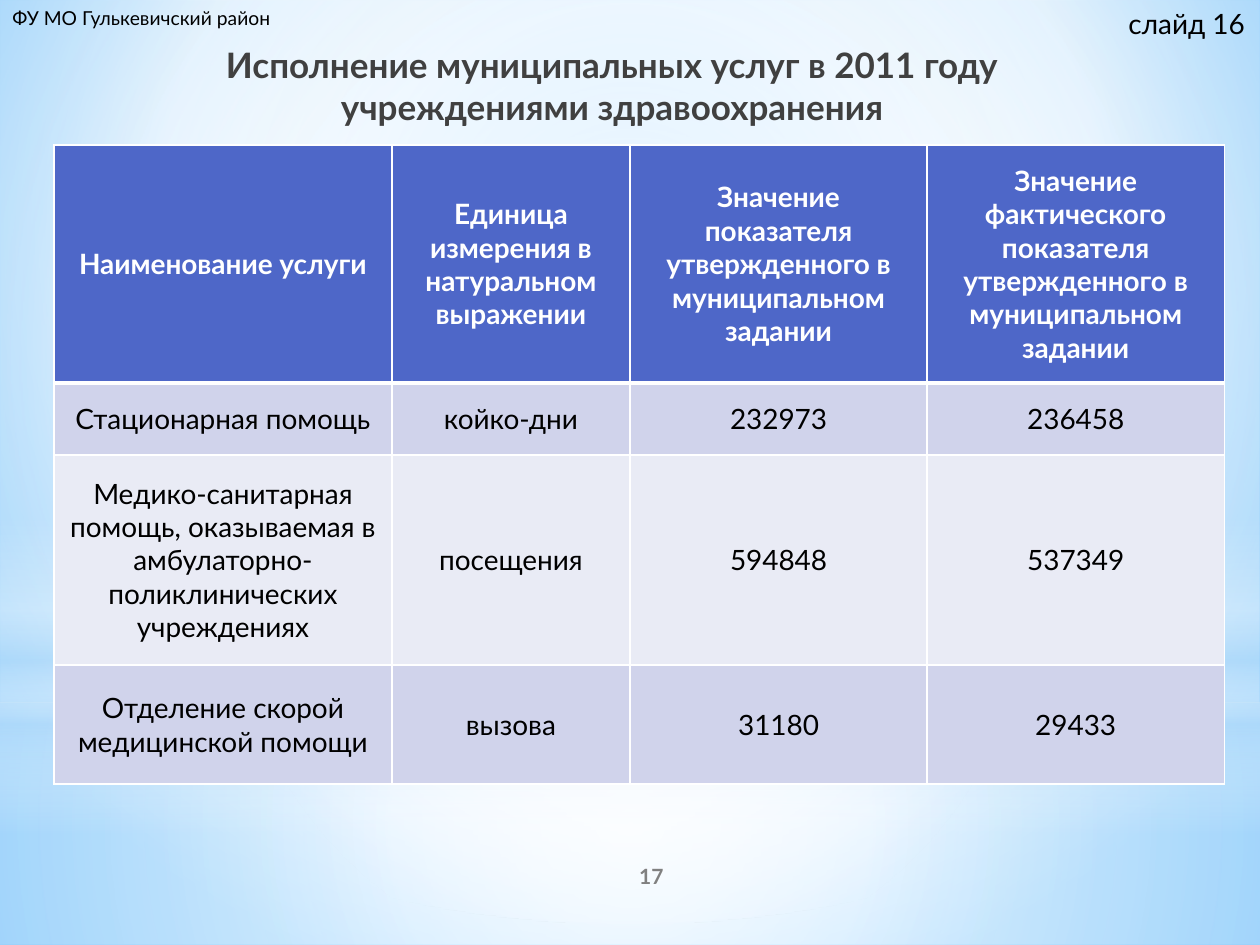
from dataclasses import dataclass

from lxml.etree import SubElement
from pptx import Presentation
from pptx.dml.color import RGBColor
from pptx.enum.shapes import MSO_SHAPE
from pptx.enum.text import MSO_ANCHOR, MSO_AUTO_SIZE, PP_ALIGN
from pptx.oxml import parse_xml
from pptx.oxml.ns import nsdecls, qn
from pptx.util import Cm, Pt


@dataclass(frozen=True)
class Theme:
    font: str = "Lato"
    white: str = "FFFFFF"
    black: str = "000000"
    haze: str = "B4DCFA"
    title: str = "404040"
    number: str = "808080"
    header: str = "4E67C8"
    bands: tuple = ("D0D3EB", "E9EBF5")
    title_size: int = 20
    body_size: int = 16
    number_size: int = 12
    note_size: int = 11


T = Theme()
CENTRE = (50, 50, 50, 50)

BACKDROP = [
    (MSO_SHAPE.RECTANGLE, (0, 14.17, 25.4, 4.88),
     [(0, T.white, 91), (37, T.white, 76), (100, T.haze, 79)], CENTRE),
    (MSO_SHAPE.RECTANGLE, (0, 0, 25.4, 14.17),
     [(0, T.white, 89), (48, T.white, 62), (100, T.haze, 79)], CENTRE),
    (MSO_SHAPE.RECTANGLE, (0, 10.46, 25.4, 6.35),
     [(0, T.white, 0), (29, T.white, 30), (45, T.haze, 40),
      (55, T.white, 26), (65, T.haze, 60), (100, T.white, 0)], None),
    (MSO_SHAPE.OVAL, (0, 4.45, 25.4, 14.17),
     [(0, T.white, 100), (56, T.white, 0)], CENTRE),
]

COLUMNS = [6.81, 4.8, 5.99, 5.99]
ROW_HEIGHTS = [4.8, 1.45, 4.24, 2.39]
ROWS = [
    ("Наименование услуги",
     "Единица измерения в натуральном выражении",
     "Значение показателя утвержденного в муниципальном задании",
     "Значение фактического показателя утвержденного в муниципальном задании"),
    ("Стационарная помощь", "койко-дни", "232973", "236458"),
    ("Медико-санитарная помощь, оказываемая в "
     "амбулаторно-поликлинических учреждениях",
     "посещения", "594848", "537349"),
    ("Отделение скорой медицинской помощи", "вызова", "31180", "29433"),
]


def set_attrs(obj, values):
    for name, value in values.items():
        setattr(obj, name, value)


def place(sp, box):
    set_attrs(sp, dict(zip(("left", "top", "width", "height"), map(Cm, box))))


def gradient(stops, focus):
    grad = parse_xml(f'<a:gradFill {nsdecls("a")} rotWithShape="1"/>')
    gs_list = SubElement(grad, qn("a:gsLst"))
    for pos, color, opacity in stops:
        gs = SubElement(gs_list, qn("a:gs"), pos=str(pos * 1000))
        clr = SubElement(gs, qn("a:srgbClr"), val=color)
        if opacity < 100:
            SubElement(clr, qn("a:alpha"), val=str(opacity * 1000))
    if focus:
        path = SubElement(grad, qn("a:path"), path="circle")
        sides = {k: str(v * 1000) for k, v in zip("ltrb", focus)}
        SubElement(path, qn("a:fillToRect"), sides)
    else:
        SubElement(grad, qn("a:lin"), ang="5400000", scaled="0")
    return grad


def apply_gradient(fill, parent, stops, focus):
    fill.solid()
    parent.replace(parent.find(qn("a:solidFill")), gradient(stops, focus))


def add_backdrop(s):
    fill = s.background.fill
    fill.solid()
    props = next(s.element.iter(qn("p:bgPr")))
    apply_gradient(fill, props, [(0, "9ED5FF", 100), (60, T.white, 100),
                                 (100, "5BB9FF", 100)], (20, 10, 20, 60))
    for kind, box, stops, focus in BACKDROP:
        sp = s.shapes.add_shape(kind, *map(Cm, box))
        sp.shadow.inherit = False
        sp.line.fill.background()
        apply_gradient(sp.fill, sp.element.spPr, stops, focus)


def write(tf, text, size, color, bold=False, align=PP_ALIGN.LEFT):
    p = tf.paragraphs[0]
    p.alignment = align
    r = p.add_run()
    r.text = text
    set_attrs(r.font, {"name": T.font, "size": Pt(size), "bold": bold})
    r.font.color.rgb = RGBColor.from_string(color)


def add_title(s, text):
    sp = s.shapes.title
    place(sp, (3.3, 0.74, 18.08, 2.21))
    s.shapes.element.append(sp.element)
    set_attrs(sp.text_frame, {"word_wrap": True, "vertical_anchor": MSO_ANCHOR.TOP,
                              "auto_size": MSO_AUTO_SIZE.NONE})
    write(sp.text_frame, text, T.title_size, T.title, True, PP_ALIGN.CENTER)


def add_label(s, box, text, size):
    tf = s.shapes.add_textbox(*map(Cm, box)).text_frame
    set_attrs(tf, {"word_wrap": False, "auto_size": MSO_AUTO_SIZE.SHAPE_TO_FIT_TEXT})
    write(tf, text, size, T.black)


def add_number(s, text):
    tf = s.shapes.add_textbox(*map(Cm, (10.59, 17.15, 5.08, 1.02))).text_frame
    set_attrs(tf, {"word_wrap": True, "vertical_anchor": MSO_ANCHOR.MIDDLE})
    write(tf, text, T.number_size, T.number, True, PP_ALIGN.CENTER)


def add_borders(props, widths):
    for i, (side, width) in enumerate(widths.items()):
        ln = parse_xml(f'<a:ln{side} {nsdecls("a")} w="{Pt(width)}"><a:solidFill>'
                       f'<a:srgbClr val="{T.white}"/></a:solidFill></a:ln{side}>')
        props.insert(i, ln)


def add_services_table(s):
    frame = s.shapes.add_table(len(ROWS), len(COLUMNS), Cm(1.09), Cm(2.92),
                               Cm(sum(COLUMNS)), Cm(sum(ROW_HEIGHTS)))
    table = frame.table
    for col, width in zip(table.columns, COLUMNS):
        col.width = Cm(width)
    for i, (row, height, texts) in enumerate(zip(table.rows, ROW_HEIGHTS, ROWS)):
        row.height = Cm(height)
        header = i == 0
        fill = T.header if header else T.bands[(i - 1) % 2]
        for cell, text in zip(row.cells, texts):
            cell.vertical_anchor = MSO_ANCHOR.MIDDLE
            cell.fill.solid()
            cell.fill.fore_color.rgb = RGBColor.from_string(fill)
            write(cell.text_frame, text, T.body_size,
                  T.white if header else T.black, header, PP_ALIGN.CENTER)
    for n, props in enumerate(frame.element.iter(qn("a:tcPr"))):
        i = n // len(COLUMNS)
        add_borders(props, {"L": 1, "R": 1, "T": 3 if i == 1 else 1,
                            "B": 3 if i == 0 else 1})


def main():
    prs = Presentation()
    set_attrs(prs, {"slide_width": Cm(25.4), "slide_height": Cm(19.05)})
    s = prs.slides.add_slide(prs.slide_layouts[5])
    add_backdrop(s)
    add_number(s, "17")
    add_title(s, "Исполнение муниципальных услуг в 2011 году "
                 "учреждениями здравоохранения")
    add_services_table(s)
    add_label(s, (22.5, 0, 2.9, 0.94), "слайд 16", T.body_size)
    add_label(s, (0, 0, 5.72, 0.74), "ФУ МО Гулькевичский район", T.note_size)
    prs.save("out.pptx")


if __name__ == "__main__":
    main()
